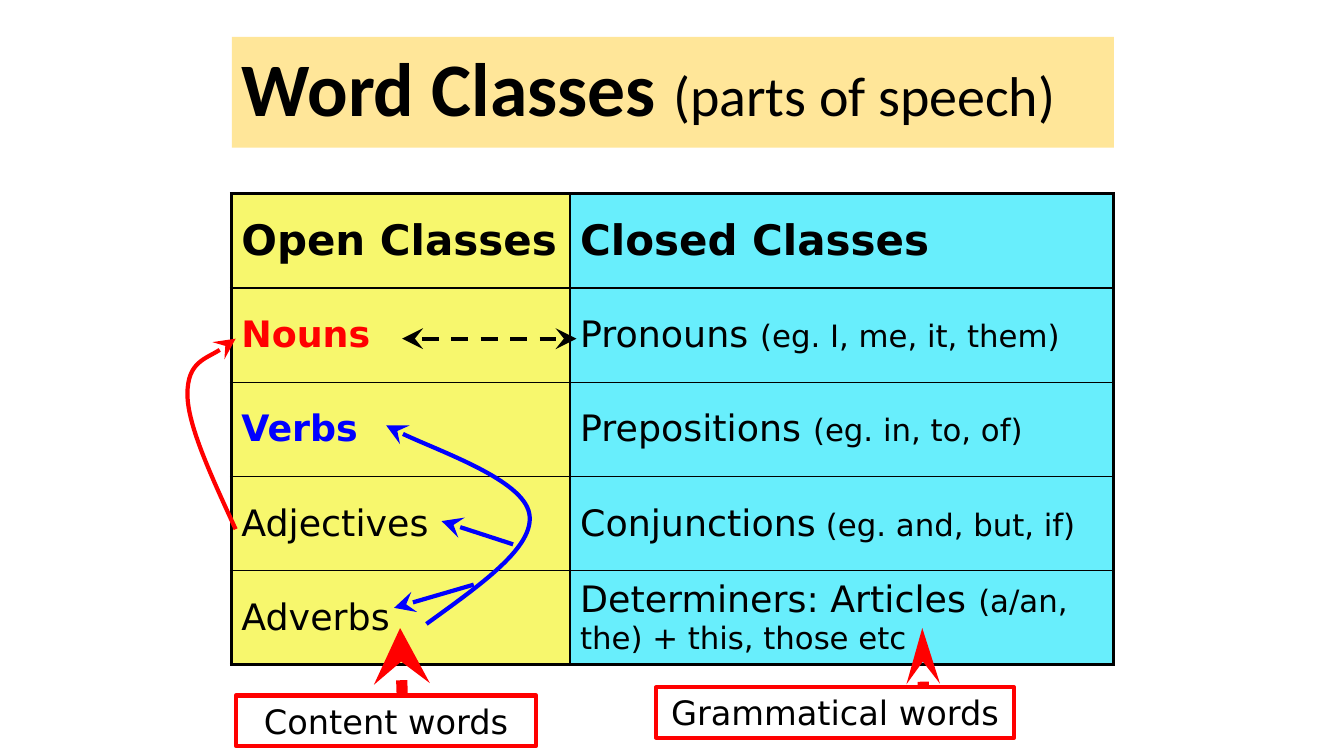
from dataclasses import dataclass

from lxml.etree import SubElement as Sub
from pptx import Presentation
from pptx.dml.color import RGBColor as RGB
from pptx.enum.dml import MSO_LINE as Dash
from pptx.enum.shapes import MSO_CONNECTOR as Link, MSO_SHAPE as Kind
from pptx.enum.text import MSO_ANCHOR as Anchor, PP_ALIGN as Align
from pptx.oxml.ns import qn
from pptx.util import Pt

BLACK = RGB(0, 0, 0)
WHITE = RGB(255, 255, 255)
RED = RGB(255, 0, 0)
BLUE = RGB(0, 0, 255)
SAND = RGB(0xFF, 0xE6, 0x99)
YELLOW = RGB(0xF7, 0xF7, 0x6D)
CYAN = RGB(0x68, 0xEE, 0xFC)
SANS = "DejaVu Sans"

Point = tuple[float, float]


@dataclass
class Row:
    open: str
    closed: str
    note: str = ""
    size: float = 26
    color: RGB = BLACK
    bold: bool = False
    head: bool = False


@dataclass
class Arrow:
    start: Point
    end: Point
    color: RGB
    weight: float = 3
    width: str = "lg"
    both: bool = False


@dataclass
class Curve:
    points: list[Point]
    color: RGB


@dataclass
class Label:
    text: str
    left: float
    top: float
    width: float


ROWS = [
    Row("Open Classes", "Closed Classes", size=30, bold=True, head=True),
    Row("Nouns", "Pronouns ", "(eg. I, me, it, them)", color=RED, bold=True),
    Row("Verbs", "Prepositions ", "(eg. in, to, of)", color=BLUE, bold=True),
    Row("Adjectives", "Conjunctions", " (eg. and, but, if)"),
    Row("Adverbs", "Determiners: Articles ", "(a/an, the) + this, those etc"),
]
CURVES = [
    Curve([(168.3, 378), (151.2, 340.6), (133.9, 303.8), (133.9, 281.5),
           (133.9, 258.5), (162.7, 248.4), (168.3, 241.9)], RED),
    Curve([(304.6, 445.7), (343.4, 417.6), (383, 390.2), (378, 366.5),
           (373, 342.7), (293, 314.6), (275.8, 303.8)], BLUE),
]
ARROWS = [
    Arrow((366.5, 388.8), (315.4, 372.2), BLUE),
    Arrow((338.4, 417.6), (281.5, 434.2), BLUE),
    Arrow((287.3, 241.9), (411.8, 241.9), BLACK, both=True),
    Arrow((287.3, 496.8), (285.8, 448.6), RED, 8),
    Arrow((659.5, 491), (658.8, 448.6), RED, 8, "med"),
]
LABELS = [
    Label("Content words", 168.5, 496.8, 214.6),
    Label("Grammatical words", 468.7, 491, 255.6),
]


def write(para, text: str, *, size: float, font: str = SANS,
          color: RGB = BLACK, bold: bool = False) -> None:
    run = para.add_run()
    run.text = text
    run.font.name = font
    run.font.size = Pt(size)
    run.font.bold = bold
    run.font.color.rgb = color


def paint(shape, color: RGB) -> None:
    shape.fill.solid()
    shape.fill.fore_color.rgb = color


def tip(shape, width: str = "lg", both: bool = False) -> None:
    """Put a stealth arrowhead at the end, or at both ends."""
    line = shape.line._get_or_add_ln()
    for tag in ("a:headEnd", "a:tailEnd") if both else ("a:tailEnd",):
        Sub(line, qn(tag), type="stealth", w=width, len="lg")


def edge(cell, sides: dict[str, float]) -> None:
    """Draw black cell borders, given their widths by side."""
    props = cell._tc.get_or_add_tcPr()
    for spot, (side, width) in enumerate(sides.items()):
        line = Sub(props, qn(f"a:ln{side}"), w=str(Pt(width)))
        fill = Sub(line, qn("a:solidFill"))
        Sub(fill, qn("a:srgbClr"), val=str(BLACK))
        props.insert(spot, line)


def add_title(slide) -> None:
    title = slide.shapes.title
    title.left, title.top = Pt(165.6), Pt(26.3)
    title.width, title.height = Pt(630), Pt(79.2)
    paint(title, SAND)
    frame = title.text_frame
    frame.vertical_anchor = Anchor.MIDDLE
    para = frame.paragraphs[0]
    para.alignment = Align.LEFT
    para.line_spacing = 0.9
    write(para, "Word Classes ", size=54, font="Calibri", bold=True)
    write(para, "(parts of speech)", size=40, font="Calibri")


def add_grid(slide) -> None:
    table = slide.shapes.add_table(len(ROWS), 2, Pt(165.2), Pt(138.4),
                                   Pt(630), Pt(336.5)).table
    table.first_row = table.horz_banding = False
    table.columns[0].width, table.columns[1].width = Pt(242), Pt(388)
    last = len(ROWS) - 1
    for i, row in enumerate(ROWS):
        table.rows[i].height = Pt(67.3)
        for j, color in enumerate((YELLOW, CYAN)):
            cell = table.cell(i, j)
            paint(cell, color)
            cell.vertical_anchor = Anchor.MIDDLE
            outer = {"L": j == 0, "R": j == 1, "T": i == 0, "B": i == last}
            edge(cell, {side: 2.25 if out else 1
                        for side, out in outer.items()})
        left, right = (table.cell(i, j).text_frame.paragraphs[0]
                       for j in (0, 1))
        write(left, row.open, size=row.size, color=row.color, bold=row.bold)
        write(right, row.closed, size=row.size, bold=row.head)
        if row.note:
            write(right, row.note, size=22)


def add_curve(slide, curve: Curve) -> None:
    """Draw an open outline and bend each three segments into a cubic."""
    first, *rest = [(Pt(x), Pt(y)) for x, y in curve.points]
    build = slide.shapes.build_freeform(*first)
    build.add_line_segments(rest, close=False)
    shape = build.convert_to_shape()
    shape.shadow.inherit = False
    shape.fill.background()
    shape.line.color.rgb = curve.color
    shape.line.width = Pt(3)
    tip(shape)
    steps = list(shape._element.iter(qn("a:lnTo")))
    outline = steps[0].getparent()
    for k in range(0, len(steps), 3):
        bend = Sub(outline, qn("a:cubicBezTo"))
        for step in steps[k:k + 3]:
            bend.append(step[0])
            outline.remove(step)


def add_arrow(slide, arrow: Arrow) -> None:
    ends = [Pt(v) for v in arrow.start + arrow.end]
    line = slide.shapes.add_connector(Link.STRAIGHT, *ends)
    line.line.color.rgb = arrow.color
    line.line.width = Pt(arrow.weight)
    if arrow.both:
        line.line.dash_style = Dash.DASH
    tip(line, arrow.width, arrow.both)
    Sub(line._element.spPr, qn("a:effectLst"))


def add_label(slide, label: Label) -> None:
    box = slide.shapes.add_shape(Kind.RECTANGLE, Pt(label.left), Pt(label.top),
                                 Pt(label.width), Pt(36))
    box.shadow.inherit = False
    paint(box, WHITE)
    box.line.color.rgb = RED
    box.line.width = Pt(3)
    frame = box.text_frame
    frame.word_wrap = True
    frame.vertical_anchor = Anchor.TOP
    para = frame.paragraphs[0]
    para.alignment = Align.CENTER
    write(para, label.text, size=24)


def main() -> None:
    deck = Presentation()
    deck.slide_width, deck.slide_height = Pt(960), Pt(540)
    slide = deck.slides.add_slide(deck.slide_layouts[5])
    add_title(slide)
    add_grid(slide)
    for items, draw in ((CURVES, add_curve), (LABELS, add_label),
                        (ARROWS, add_arrow)):
        for item in items:
            draw(slide, item)
    deck.save("out.pptx")


if __name__ == "__main__":
    main()
